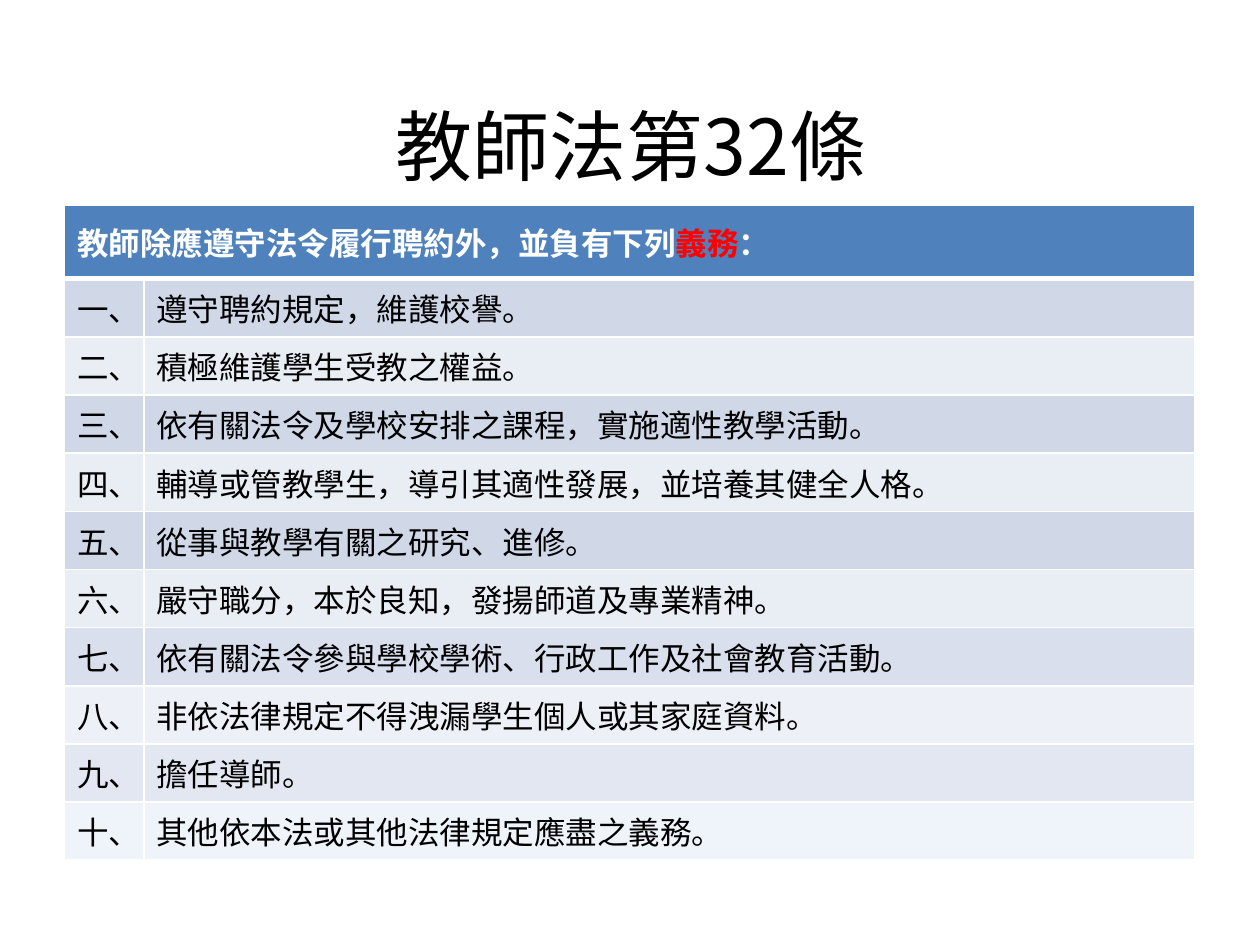
from pptx import Presentation
from pptx.dml.color import RGBColor
from pptx.enum.text import MSO_ANCHOR, PP_ALIGN
from pptx.oxml import parse_xml
from pptx.oxml.ns import nsdecls, qn
from pptx.util import Pt
from lxml.etree import SubElement

FONT = "Noto Sans CJK SC"
BLACK, WHITE, RED, BLUE = "000000", "FFFFFF", "FF0000", "4F81BD"
DARK, LIGHT, PALE = "D0D8E8", "E9EDF4", "E4EDF8"

TITLE = "教師法第32條"
HEADER = [("教師除應遵守法令履行聘約外，並負有下列", WHITE), ("義務", RED), ("：", WHITE)]

# Number, duty, fill colour, fill opacity in percent
DUTIES = [
    ("一、", "遵守聘約規定，維護校譽。", DARK, 100),
    ("二、", "積極維護學生受教之權益。", LIGHT, 100),
    ("三、", "依有關法令及學校安排之課程，實施適性教學活動。", DARK, 100),
    ("四、", "輔導或管教學生，導引其適性發展，並培養其健全人格。", LIGHT, 100),
    ("五、", "從事與教學有關之研究、進修。", DARK, 100),
    ("六、", "嚴守職分，本於良知，發揚師道及專業精神。", LIGHT, 100),
    ("七、", "依有關法令參與學校學術、行政工作及社會教育活動。", DARK, 80),
    ("八、", "非依法律規定不得洩漏學生個人或其家庭資料。", LIGHT, 80),
    ("九、", "擔任導師。", DARK, 60),
    ("十、", "其他依本法或其他法律規定應盡之義務。", PALE, 60),
]


def rgb(color):
    return RGBColor.from_string(color)


def add_run(p, text, size, color, bold=False):
    r = p.add_run()
    r.text = text
    r.font.size = Pt(size)
    r.font.bold = bold
    r.font.name = FONT
    r.font.color.rgb = rgb(color)
    SubElement(r.font._element, qn("a:ea")).set("typeface", FONT)


def add_title(slide, text):
    s = slide.shapes.add_textbox(Pt(36.5), Pt(37.5), Pt(648), Pt(90))
    tf = s.text_frame
    tf.word_wrap = True
    tf.vertical_anchor = MSO_ANCHOR.MIDDLE
    p = tf.paragraphs[0]
    p.alignment = PP_ALIGN.CENTER
    add_run(p, text, 44, BLACK)


def set_borders(cell, top=1, bottom=1):
    tcPr = cell._tc.get_or_add_tcPr()
    widths = {"lnL": 1, "lnR": 1, "lnT": top, "lnB": bottom}
    for i, (tag, width) in enumerate(widths.items()):
        tcPr.insert(i, parse_xml(
            f'<a:{tag} {nsdecls("a")} w="{Pt(width)}"><a:solidFill>'
            f'<a:srgbClr val="{WHITE}"/></a:solidFill></a:{tag}>'))


def style_cell(cell, color, opacity=100, top=1, bottom=1):
    cell.vertical_anchor = MSO_ANCHOR.MIDDLE
    cell.fill.solid()
    cell.fill.fore_color.rgb = rgb(color)
    if opacity < 100:
        clr = cell._tc.tcPr.find(".//" + qn("a:srgbClr"))
        SubElement(clr, qn("a:alpha")).set("val", str(opacity * 1000))
    set_borders(cell, top, bottom)


def add_duty_table(slide):
    s = slide.shapes.add_table(len(DUTIES) + 1, 2, Pt(37), Pt(117), Pt(646), Pt(374.8))
    table = s.table
    for col, width in zip(table.columns, (45.2, 600.8)):
        col.width = Pt(width)
    for i, row in enumerate(table.rows):
        row.height = Pt(33.25 if i else 42.3)

    # Header across both columns
    for col in range(2):
        style_cell(table.cell(0, col), BLUE, bottom=3)
    head = table.cell(0, 0)
    head.merge(table.cell(0, 1))
    for text, color in HEADER:
        add_run(head.text_frame.paragraphs[0], text, 18, color, bold=True)

    # Numbered duties
    for i, (number, duty, color, opacity) in enumerate(DUTIES, 1):
        for col, text in enumerate((number, duty)):
            cell = table.cell(i, col)
            style_cell(cell, color, opacity, top=3 if i == 1 else 1)
            add_run(cell.text_frame.paragraphs[0], text, 18, BLACK)


def main():
    prs = Presentation()
    prs.slide_width, prs.slide_height = Pt(720), Pt(540)
    slide = prs.slides.add_slide(prs.slide_layouts[6])
    add_title(slide, TITLE)
    add_duty_table(slide)
    prs.save("out.pptx")


if __name__ == "__main__":
    main()
